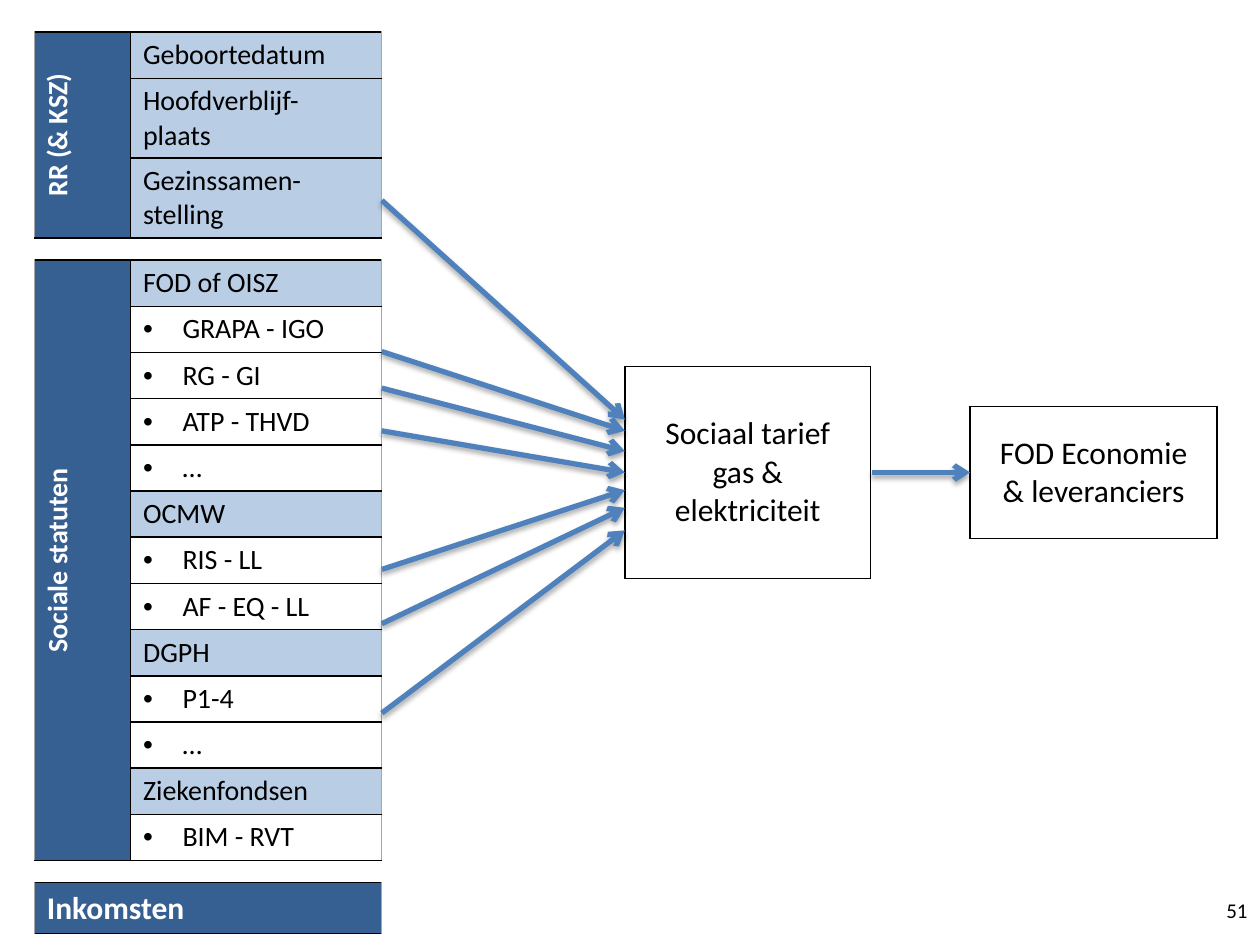
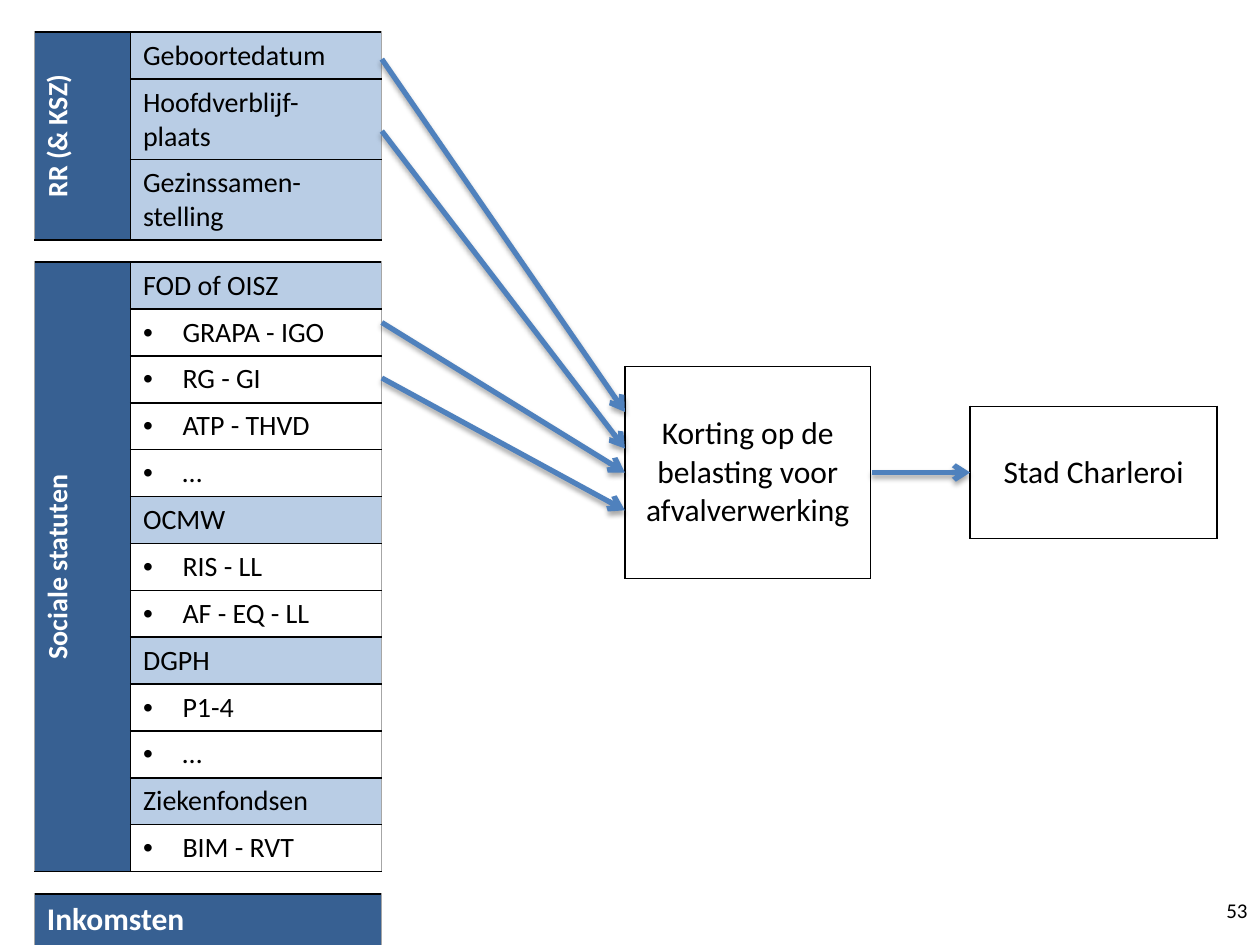
import dataclasses

import lxml.etree
import pptx
import pptx.dml.color
import pptx.enum.shapes
import pptx.enum.text
import pptx.oxml
import pptx.oxml.ns
import pptx.util

Pt = pptx.util.Pt
qn = pptx.oxml.ns.qn
ALIGN = pptx.enum.text.PP_ALIGN
MIDDLE = pptx.enum.text.MSO_ANCHOR.MIDDLE


@dataclasses.dataclass(frozen=True)
class Theme:
    """Colours, font and type sizes shared by the slides."""
    font: str = "Calibri"
    black: str = "000000"
    white: str = "FFFFFF"
    band: str = "376092"
    heading: str = "B9CDE5"
    arrow: str = "4F81BD"
    edge: str = "A6A6A6"
    large: float = 18
    body: float = 16
    small: float = 12
    spacer: float = 4


THEME = Theme()
TABLE_LEFT, TABLE_TOP = 19.6, 5.7
COLUMNS = (55, 143.4)
SOURCE_EDGE, BENEFIT_LEFT, BENEFIT_RIGHT, RECEIVER_LEFT = 218.2, 357.1, 498.2, 554.4
MID_Y = 270
GAP = 12.7
BULLET = "• "
SOURCES = {
    "RR (& KSZ)": ["Geboortedatum", "Hoofdverblijf-\nplaats", "Gezinssamen-stelling"],
    "Sociale statuten": [
        "FOD of OISZ", "• GRAPA - IGO", "• RG - GI", "• ATP - THVD", "• …",
        "OCMW", "• RIS - LL", "• AF - EQ - LL",
        "DGPH", "• P1-4", "• …",
        "Ziekenfondsen", "• BIM - RVT"],
}
TWO_LINE_ROWS = SOURCES["RR (& KSZ)"][1:]


def rgb(value):
    """Return a colour from its hex value."""
    return pptx.dml.color.RGBColor.from_string(value)


def style(p, size, color=THEME.black, bold=False, align=ALIGN.LEFT):
    """Set the font and alignment of a paragraph."""
    p.alignment = align
    p.font.name, p.font.size, p.font.bold = THEME.font, Pt(size), bold
    p.font.color.rgb = rgb(color)


def set_borders(cell, **colors):
    """Draw the named sides (L, R, T, B) of a cell and clear the others."""
    tc_pr = cell._tc.get_or_add_tcPr()
    for side in "LRTB":
        color = colors.get(side)
        width = 0.5 if color == THEME.edge else 1
        ln = lxml.etree.SubElement(tc_pr, qn(f"a:ln{side}"), w=str(Pt(width)))
        if color:
            fill = lxml.etree.SubElement(ln, qn("a:solidFill"))
            lxml.etree.SubElement(fill, qn("a:srgbClr"), val=color)
        else:
            lxml.etree.SubElement(ln, qn("a:noFill"))


def set_fill(cell, color):
    """Fill a cell with one colour."""
    cell.fill.solid()
    cell.fill.fore_color.rgb = rgb(color)


def add_bullet(p):
    """Give a paragraph a round bullet with a hanging indent."""
    p_pr = p._p.get_or_add_pPr()
    p_pr.set("marL", str(Pt(22.5)))
    p_pr.set("indent", str(-Pt(22.5)))
    font = pptx.oxml.parse_xml(
        f'<a:buFont {pptx.oxml.ns.nsdecls("a")} typeface="Arial"/>')
    char = pptx.oxml.parse_xml(
        f'<a:buChar {pptx.oxml.ns.nsdecls("a")} char="•"/>')
    p_pr.insert(0, font)
    p_pr.insert(1, char)


def write_cell(cell, text, size, **options):
    """Write one styled paragraph per line of text."""
    cell.text_frame.text = text.removeprefix(BULLET)
    for p in cell.text_frame.paragraphs:
        style(p, size, **options)
        if text.startswith(BULLET):
            add_bullet(p)


def add_plain_table(slide, left, top, widths, heights):
    """Add a table without banding, with the given columns and rows."""
    frame = slide.shapes.add_table(
        len(heights), len(widths), Pt(left), Pt(top), Pt(sum(widths)), Pt(sum(heights)))
    table = frame.table
    table.first_row = table.horz_banding = False
    for column, width in zip(table.columns, widths):
        column.width = Pt(width)
    for row, height in zip(table.rows, heights):
        row.height = Pt(height)
    return table


def add_spacer(table, row, **borders):
    """Make a row an empty gap across both columns."""
    for cell in table.rows[row].cells:
        cell.margin_top = cell.margin_bottom = 0
        set_borders(cell, **borders)
        cell.fill.background()
        lxml.etree.SubElement(cell.text_frame.paragraphs[0]._p, qn("a:endParaRPr"),
                              sz=str(int(THEME.spacer * 100)))
    table.cell(row, 0).merge(table.cell(row, 1))


def add_group(table, start, label, items, margin):
    """Fill a block of rows with a turned label and its items."""
    for row, item in enumerate(items, start):
        band, cell = table.rows[row].cells
        set_borders(band, L=THEME.edge, R=THEME.black, T=THEME.black, B=THEME.black)
        set_fill(band, THEME.band)
        set_borders(cell, L=THEME.black, R=THEME.edge, T=THEME.black, B=THEME.black)
        set_fill(cell, THEME.white if item.startswith(BULLET) else THEME.heading)
        cell.margin_top = cell.margin_bottom = Pt(margin)
        write_cell(cell, item, THEME.body)
    head = table.cell(start, 0)
    head.merge(table.cell(start + len(items) - 1, 0))
    head._tc.get_or_add_tcPr().set("vert", "vert270")
    write_cell(head, label, THEME.body, color=THEME.white, bold=True, align=ALIGN.CENTER)


def add_sources(slide, line_height):
    """Add the table of data sources."""
    heights = []
    for items in SOURCES.values():
        heights.append(GAP)
        heights += [line_height + 19.2 if item in TWO_LINE_ROWS else line_height
                    for item in items]
    heights += [GAP, line_height + 2.6]
    table = add_plain_table(slide, TABLE_LEFT, TABLE_TOP, COLUMNS, heights)
    margin = (line_height - 19.6) / 2
    row = 0
    for label, items in SOURCES.items():
        borders = {"T": THEME.black} if row else {}
        add_spacer(table, row, B=THEME.black, **borders)
        add_group(table, row + 1, label, items, margin)
        row += len(items) + 1
    add_spacer(table, row, T=THEME.black, B=THEME.black)
    for cell in table.rows[row + 1].cells:
        set_borders(cell, L=THEME.edge, R=THEME.edge, T=THEME.black, B=THEME.black)
        set_fill(cell, THEME.band)
    income = table.cell(row + 1, 0)
    income.merge(table.cell(row + 1, 1))
    write_cell(income, "Inkomsten", THEME.large, color=THEME.white, bold=True)


def add_box(slide, text, left, width, height):
    """Add a framed one-cell table centred on the flow line."""
    cell = add_plain_table(slide, left, MID_Y - height / 2, [width], [height]).cell(0, 0)
    set_borders(cell, **dict.fromkeys("LRTB", THEME.black))
    cell.fill.background()
    cell.vertical_anchor = MIDDLE
    write_cell(cell, text, THEME.large, align=ALIGN.CENTER)


def add_arrow(slide, x1, y1, x2, y2):
    """Add an arrow with a soft shadow below it."""
    line = slide.shapes.add_connector(
        pptx.enum.shapes.MSO_CONNECTOR.STRAIGHT, Pt(x1), Pt(y1), Pt(x2), Pt(y2))
    line.line.width = Pt(3)
    line.line.color.rgb = rgb(THEME.arrow)
    lxml.etree.SubElement(line.line._get_or_add_ln(), qn("a:tailEnd"), type="arrow")
    effects = lxml.etree.SubElement(line._element.spPr, qn("a:effectLst"))
    shadow = lxml.etree.SubElement(
        effects, qn("a:outerShdw"), blurRad=str(Pt(3.1)), dist=str(Pt(1.8)),
        dir="5400000", rotWithShape="0")
    color = lxml.etree.SubElement(shadow, qn("a:srgbClr"), val=THEME.black)
    lxml.etree.SubElement(color, qn("a:alpha"), val="35000")


def add_page_number(slide, number):
    """Add the page number at the lower right."""
    tf = slide.shapes.add_textbox(Pt(661), Pt(509.8), Pt(59), Pt(20.9)).text_frame
    tf.word_wrap = True
    tf.vertical_anchor = MIDDLE
    tf.text = str(number)
    style(tf.paragraphs[0], THEME.small, align=ALIGN.RIGHT)


def add_flow_slide(prs, number, benefit, receiver, links, line_height):
    """Add a slide leading from sources to a benefit and its receiver."""
    slide = prs.slides.add_slide(prs.slide_layouts[6])
    add_page_number(slide, number)
    add_sources(slide, line_height)
    add_box(slide, benefit, BENEFIT_LEFT, 140.4, 121)
    add_box(slide, receiver, RECEIVER_LEFT, 141.1, 75.6)
    for start, end in links:
        add_arrow(slide, SOURCE_EDGE, start, BENEFIT_LEFT, end)
    add_arrow(slide, BENEFIT_RIGHT, MID_Y, RECEIVER_LEFT, MID_Y)


def main():
    """Build the presentation."""
    prs = pptx.Presentation()
    prs.slide_width, prs.slide_height = Pt(720), Pt(540)
    add_flow_slide(
        prs, 51, "Sociaal tarief\ngas & elektriciteit", "FOD Economie\n& leveranciers",
        [(114.5, 239.8), (200.9, 246.2), (221.8, 257.8), (246.2, MID_Y),
         (325.4, 280.1), (356.4, 290.2), (407.5, 303.1)], 26.4)
    add_flow_slide(
        prs, 53, "Korting op de belasting voor afvalverwerking", "Stad Charleroi",
        [(33.8, 235.4), (74.9, 256.3), (184.3, MID_Y), (216, 291.6)], 26.8)
    prs.save("out.pptx")


if __name__ == "__main__":
    main()
